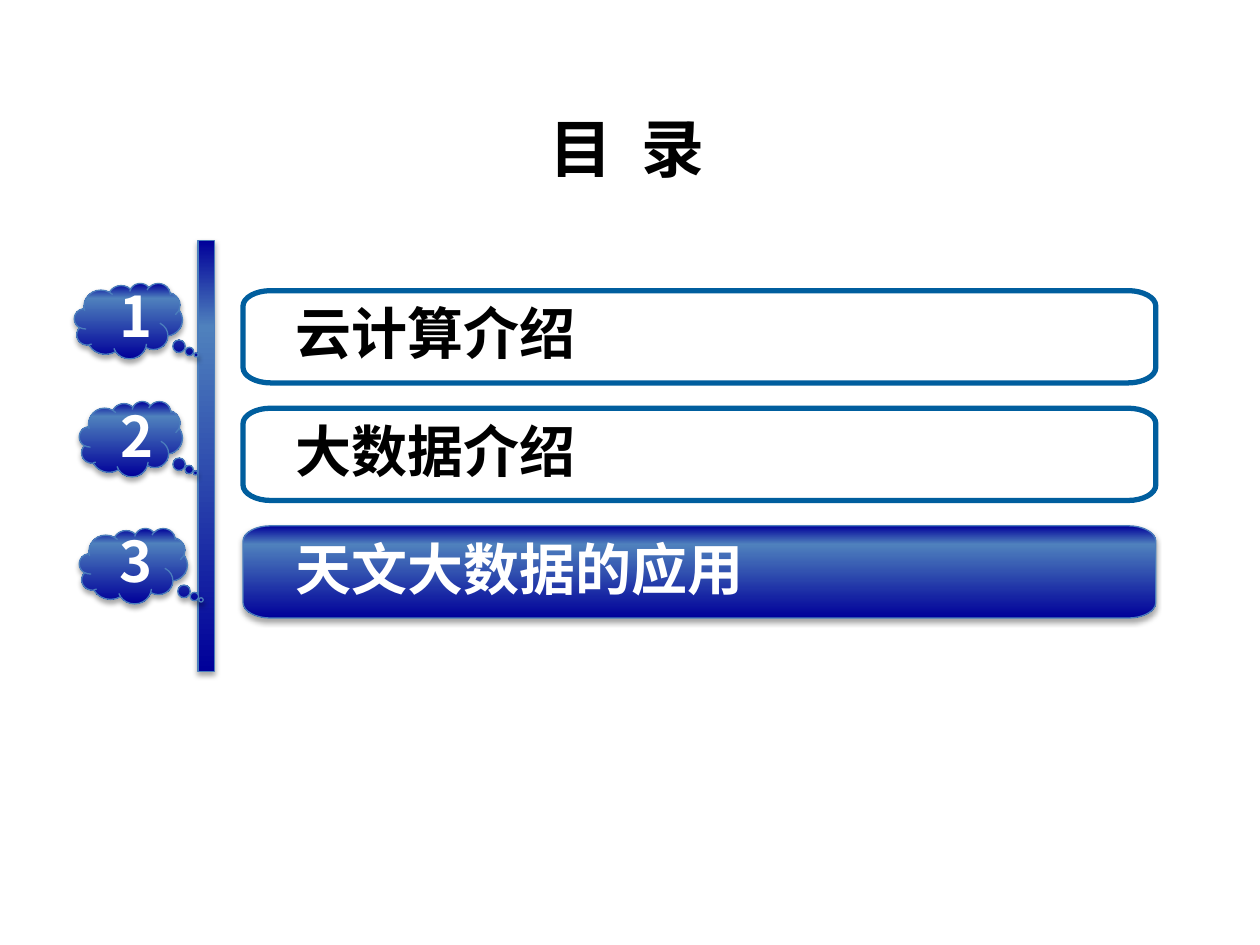
from copy import deepcopy

from lxml import etree
from pptx import Presentation
from pptx.dml.color import RGBColor
from pptx.enum.shapes import MSO_SHAPE as Preset
from pptx.enum.text import MSO_ANCHOR as Anchor, MSO_AUTO_SIZE as AutoSize, PP_ALIGN as Align
from pptx.oxml.ns import qn
from pptx.util import Cm, Pt

NAVY = RGBColor(0x00, 0x00, 0x99)
STEEL = RGBColor(0x4F, 0x81, 0xBD)
EDGE = RGBColor(0x4B, 0x7E, 0xBC)
FRAME = RGBColor(0x00, 0x5E, 0x9E)
BLACK = RGBColor(0x00, 0x00, 0x00)
WHITE = RGBColor(0xFF, 0xFF, 0xFF)
FONT = "Noto Sans CJK SC"

TITLE = "目  录"
# Topic, highlighted, cloud (left, top, width) and number (left, top) from the row's corner
TOPICS = [
    ("云计算介绍", False, (-3.4, -0.15, 2.18), (-2.77, -0.16)),
    ("大数据介绍", False, (-3.3, -0.14, 2.08), (-2.74, -0.1)),
    ("天文大数据的应用", True, (-3.3, 0.05, 2.18), (-2.77, 0.04)),
]
ROW_LEFT, ROW_TOP, ROW_PITCH = 4.9, 5.86, 2.37
ROW_WIDTH, ROW_HEIGHT = 18.4, 1.86
CORNER_X, CORNER_Y = 0.56, 0.31
ARC_PULL = 0.55  # how far a curve's control points reach toward the corner


def apply_format(target, values):
    for name, value in values.items():
        setattr(target, name, value)


def write_text(shape, words, size, color, frame_format, paragraph_format):
    frame = shape.text_frame
    apply_format(frame, frame_format)
    paragraph = frame.paragraphs[0]
    apply_format(paragraph, paragraph_format)
    run = paragraph.add_run()
    run.text = words
    apply_format(run.font, {"name": FONT, "size": Pt(size), "bold": True})
    run.font.color.rgb = color
    latin = run._r.rPr.find(qn("a:latin"))
    latin.addnext(latin.makeelement(qn("a:ea"), {"typeface": FONT}))


def outline(shape, color, width):
    shape.line.color.rgb = color
    shape.line.width = Pt(width)
    shape.shadow.inherit = False


def make_glossy(shape):
    """Give a vertical navy-steel-navy gradient, a thin edge and a soft shadow."""
    fill = shape.fill
    fill.gradient()
    fill.gradient_angle = 270
    stop_list = shape._element.spPr.find(".//" + qn("a:gsLst"))
    stop_list.append(deepcopy(stop_list[0]))
    for stop, position, color in zip(fill.gradient_stops, (0, 0.2, 1), (NAVY, STEEL, NAVY)):
        stop.position = position
        stop.color.rgb = color
    outline(shape, EDGE, 0.75)
    effects = shape._element.spPr.find(qn("a:effectLst"))
    shadow = etree.SubElement(effects, qn("a:outerShdw"), {
        "blurRad": str(Pt(3.1)), "dist": str(Pt(1.8)), "dir": "5400000", "rotWithShape": "0"})
    shade = etree.SubElement(shadow, qn("a:srgbClr"), val=str(BLACK))
    etree.SubElement(shade, qn("a:alpha"), val="35000")


def pull_toward(point, corner):
    return tuple(p + (c - p) * ARC_PULL for p, c in zip(point, corner))


def add_oval_cornered_bar(slide, left, top, width, height):
    """Draw a bar whose corners are quarter ellipses, each one curve."""
    right, bottom = width - CORNER_X, height - CORNER_Y
    arcs = [((0, CORNER_Y), (0, 0), (CORNER_X, 0)),
            ((right, 0), (width, 0), (width, CORNER_Y)),
            ((width, bottom), (width, height), (right, height)),
            ((CORNER_X, height), (0, height), (0, bottom))]
    points = [(Cm(left + x), Cm(top + y))
              for start, _, end in arcs for x, y in (start, end)]
    builder = slide.shapes.build_freeform(*points[0])
    builder.add_line_segments(points[1:], close=True)
    bar = builder.convert_to_shape()
    segments = list(bar._element.iter(qn("a:lnTo")))
    for segment, (start, corner, end) in zip(segments[::2], arcs):
        curve = segment.makeelement(qn("a:cubicBezTo"), {})
        for x, y in (pull_toward(start, corner), pull_toward(end, corner), end):
            etree.SubElement(curve, qn("a:pt"), x=str(int(Cm(x))), y=str(int(Cm(y))))
        segment.getparent().replace(segment, curve)
    return bar


def add_title(slide, left, top, width, height):
    title = slide.shapes.add_textbox(Cm(left), Cm(top), Cm(width), Cm(height))
    write_text(title, TITLE, 36, BLACK,
               {"word_wrap": True, "auto_size": AutoSize.SHAPE_TO_FIT_TEXT,
                "margin_left": Cm(0.33), "margin_right": Cm(0.33),
                "margin_top": Cm(0.17), "margin_bottom": Cm(0.17)},
               {"alignment": Align.CENTER, "line_spacing": Pt(32)})


def add_spine(slide, left, top, width, height):
    make_glossy(slide.shapes.add_shape(
        Preset.RECTANGLE, Cm(left), Cm(top), Cm(width), Cm(height)))


def add_topic_bar(slide, left, top, width, height, topic, highlighted):
    bar = add_oval_cornered_bar(slide, left, top, width, height)
    if highlighted:
        make_glossy(bar)
    else:
        bar.fill.background()
        outline(bar, FRAME, 3)
    write_text(bar, topic, 32, WHITE if highlighted else BLACK,
               {"word_wrap": True, "vertical_anchor": Anchor.MIDDLE,
                "margin_left": Cm(1.05), "margin_right": Cm(1.05),
                "margin_top": Cm(0.2), "margin_bottom": Cm(0.2)},
               {"alignment": Align.LEFT, "line_spacing": 0.9})


def add_cloud(slide, left, top, width):
    cloud = slide.shapes.add_shape(
        Preset.CLOUD_CALLOUT, Cm(left), Cm(top), Cm(width), Cm(1.52))
    cloud.adjustments[0], cloud.adjustments[1] = 0.626, 0.45
    make_glossy(cloud)


def add_number(slide, left, top, number):
    label = slide.shapes.add_textbox(Cm(left), Cm(top), Cm(1.22), Cm(1.5))
    write_text(label, str(number), 32, WHITE,
               {"word_wrap": False, "auto_size": AutoSize.SHAPE_TO_FIT_TEXT},
               {"alignment": Align.CENTER, "line_spacing": 0.9})


def add_contents(slide, left, top, width, height):
    for index, (topic, highlighted, cloud, number) in enumerate(TOPICS):
        row_top = top + index * ROW_PITCH
        add_topic_bar(slide, left, row_top, width, height, topic, highlighted)
        add_cloud(slide, left + cloud[0], row_top + cloud[1], cloud[2])
        add_number(slide, left + number[0], row_top + number[1], index + 1)


def main():
    deck = Presentation()
    deck.slide_width, deck.slide_height = Cm(25.4), Cm(19.05)
    slide = deck.slides.add_slide(deck.slide_layouts[6])
    add_spine(slide, 3.99, 4.85, 0.33, 8.69)
    add_title(slide, -0.05, 2.43, 25.38, 1.47)
    add_contents(slide, ROW_LEFT, ROW_TOP, ROW_WIDTH, ROW_HEIGHT)
    deck.save("out.pptx")


if __name__ == "__main__":
    main()
